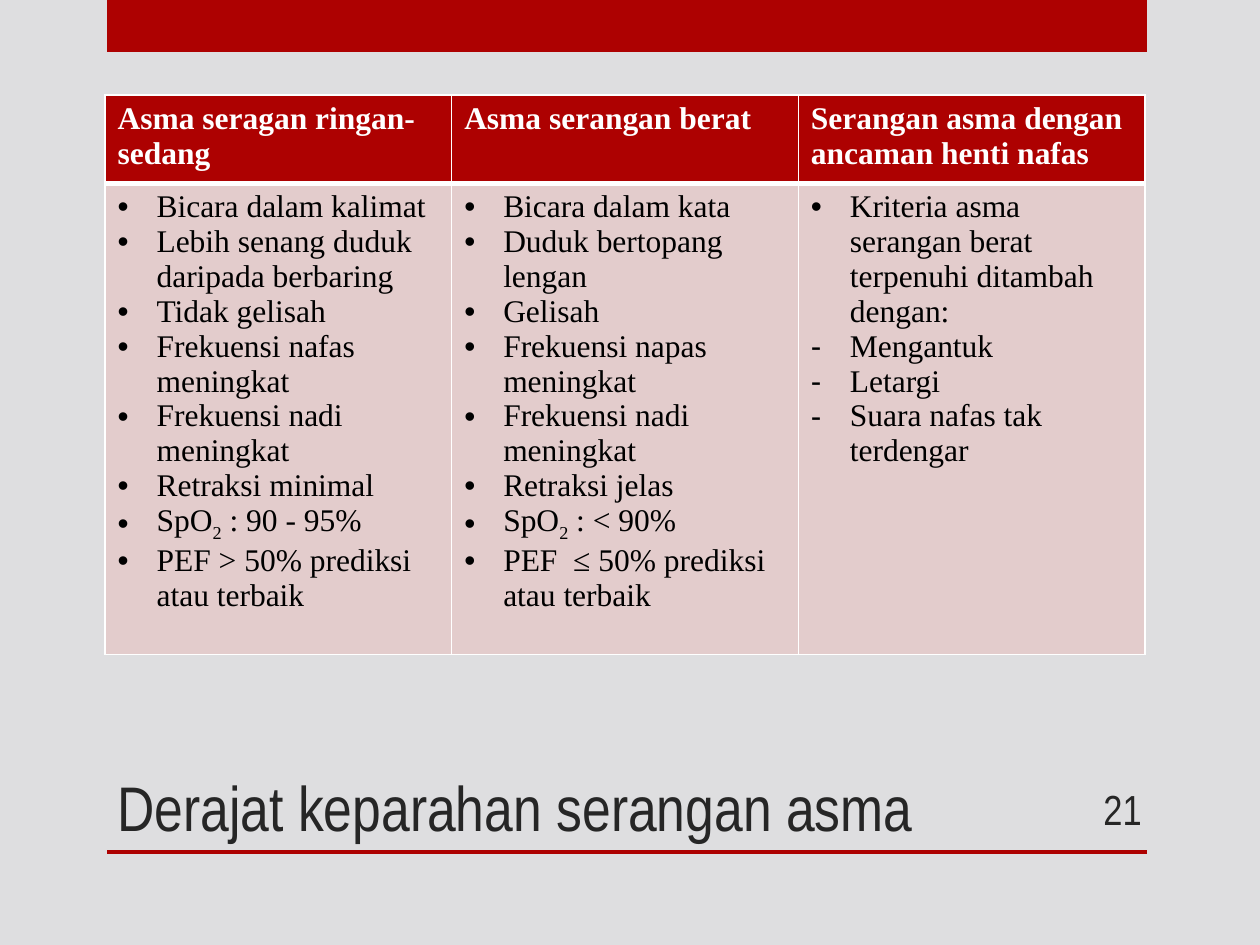
from lxml import etree
from pptx import Presentation
from pptx import util as u
from pptx.dml.color import RGBColor
from pptx.enum import shapes, text
from pptx.oxml.ns import qn

RED = RGBColor(0xAD, 0x01, 0x01)
PINK = RGBColor(0xE3, 0xCC, 0xCC)
GREY = RGBColor(0xDE, 0xDE, 0xE0)
DARK = RGBColor(0x26, 0x26, 0x26)
WHITE = RGBColor(0xFF, 0xFF, 0xFF)
BLACK = RGBColor(0, 0, 0)

PX_PER_INCH = 126
HEADING_FONT = "Arial Narrow"
BODY_FONT = "Times New Roman"
SUBSCRIPT_MARK = "~"  # encloses subscript text

SEVERITIES = [
    ("Asma seragan ringan-sedang", [
        ("•", "Bicara dalam kalimat"),
        ("•", "Lebih senang duduk daripada berbaring"),
        ("•", "Tidak gelisah"),
        ("•", "Frekuensi nafas meningkat"),
        ("•", "Frekuensi nadi meningkat"),
        ("•", "Retraksi minimal"),
        ("•", "SpO~2~ : 90 - 95%"),
        ("•", "PEF > 50% prediksi atau terbaik"),
    ]),
    ("Asma serangan berat", [
        ("•", "Bicara dalam kata"),
        ("•", "Duduk bertopang lengan"),
        ("•", "Gelisah"),
        ("•", "Frekuensi napas meningkat"),
        ("•", "Frekuensi nadi meningkat"),
        ("•", "Retraksi jelas"),
        ("•", "SpO~2~ : < 90%"),
        ("•", "PEF  ≤ 50% prediksi atau terbaik"),
    ]),
    ("Serangan asma dengan ancaman henti nafas", [
        ("•", "Kriteria asma serangan berat terpenuhi ditambah dengan:"),
        ("-", "Mengantuk"),
        ("-", "Letargi"),
        ("-", "Suara nafas tak terdengar"),
    ]),
]


def px(length):
    return u.Emu(round(length * u.Inches(1) / PX_PER_INCH))


def write(paragraph, content, *, font, size, color, bold=False,
          align=text.PP_ALIGN.LEFT):
    paragraph.alignment = align
    for index, part in enumerate(content.split(SUBSCRIPT_MARK)):
        run = paragraph.add_run()
        run.text = part
        run.font.name = font
        run.font.size = u.Pt(size)
        run.font.bold = bold
        run.font.color.rgb = color
        if index % 2:
            run.font._element.set("baseline", "-25000")


def add_bullet(paragraph, character, indent):
    properties = paragraph._p.get_or_add_pPr()
    properties.set("marL", str(indent))
    properties.set("indent", str(-indent))
    etree.SubElement(properties, qn("a:buFont"), typeface="Arial")
    etree.SubElement(properties, qn("a:buChar"), char=character)


def set_borders(cell, color, **widths):
    """Draw cell borders; widths are points for L, R, T and B."""
    properties = cell._tc.get_or_add_tcPr()
    for index, (side, width) in enumerate(widths.items()):
        line = etree.Element(qn(f"a:ln{side}"), w=str(u.Pt(width)))
        fill = etree.SubElement(line, qn("a:solidFill"))
        etree.SubElement(fill, qn("a:srgbClr"), val=str(color))
        properties.insert(index, line)


class SlideBuilder:
    def __init__(self, slide, background):
        self.slide = slide
        fill = slide.background.fill
        fill.solid()
        fill.fore_color.rgb = background

    def bar(self, left, top, width, height):
        shape = self.slide.shapes.add_shape(
            shapes.MSO_SHAPE.RECTANGLE, px(left), px(top), px(width), px(height))
        shape.shadow.inherit = False
        shape.fill.solid()
        shape.fill.fore_color.rgb = RED
        shape.line.fill.background()

    def heading(self, content, left, top, width, height, *, anchor, **style):
        shape = self.slide.shapes.add_textbox(
            px(left), px(top), px(width), px(height))
        frame = shape.text_frame
        frame.word_wrap = True
        frame.vertical_anchor = anchor
        write(frame.paragraphs[0], content, font=HEADING_FONT, color=DARK, **style)

    def cell(self, cell, fill, bottom):
        cell.fill.solid()
        cell.fill.fore_color.rgb = fill
        set_borders(cell, WHITE, L=1, R=1, T=1, B=bottom)
        return cell.text_frame

    def severity_table(self, columns, left, top, width, row_heights):
        table = self.slide.shapes.add_table(
            len(row_heights), len(columns), px(left), px(top), px(width),
            px(sum(row_heights))).table
        table.horz_banding = False
        for row, height in zip(table.rows, row_heights):
            row.height = px(height)
        for index, (title, signs) in enumerate(columns):
            header = self.cell(table.cell(0, index), RED, bottom=3)
            write(header.paragraphs[0], title, font=BODY_FONT, size=18,
                  color=WHITE, bold=True)
            body = self.cell(table.cell(1, index), PINK, bottom=1)
            for number, (character, sign) in enumerate(signs):
                paragraph = body.add_paragraph() if number else body.paragraphs[0]
                add_bullet(paragraph, character, px(39))
                write(paragraph, sign, font=BODY_FONT, size=18, color=BLACK)


def main():
    presentation = Presentation()
    presentation.slide_width = px(1260)
    presentation.slide_height = px(945)
    slide = presentation.slides.add_slide(presentation.slide_layouts[6])

    builder = SlideBuilder(slide, GREY)
    builder.bar(107, 0, 1040, 52)
    builder.bar(107, 850, 1040, 4)
    builder.heading("Derajat keparahan serangan asma", 105, 630, 935, 220,
                    anchor=text.MSO_ANCHOR.BOTTOM, size=36)
    builder.severity_table(SEVERITIES, 105, 95, 1040, (82, 435))
    builder.heading("21", 1050, 784, 104, 50, anchor=text.MSO_ANCHOR.MIDDLE,
                    size=24, align=text.PP_ALIGN.RIGHT)
    presentation.save("out.pptx")


if __name__ == "__main__":
    main()
